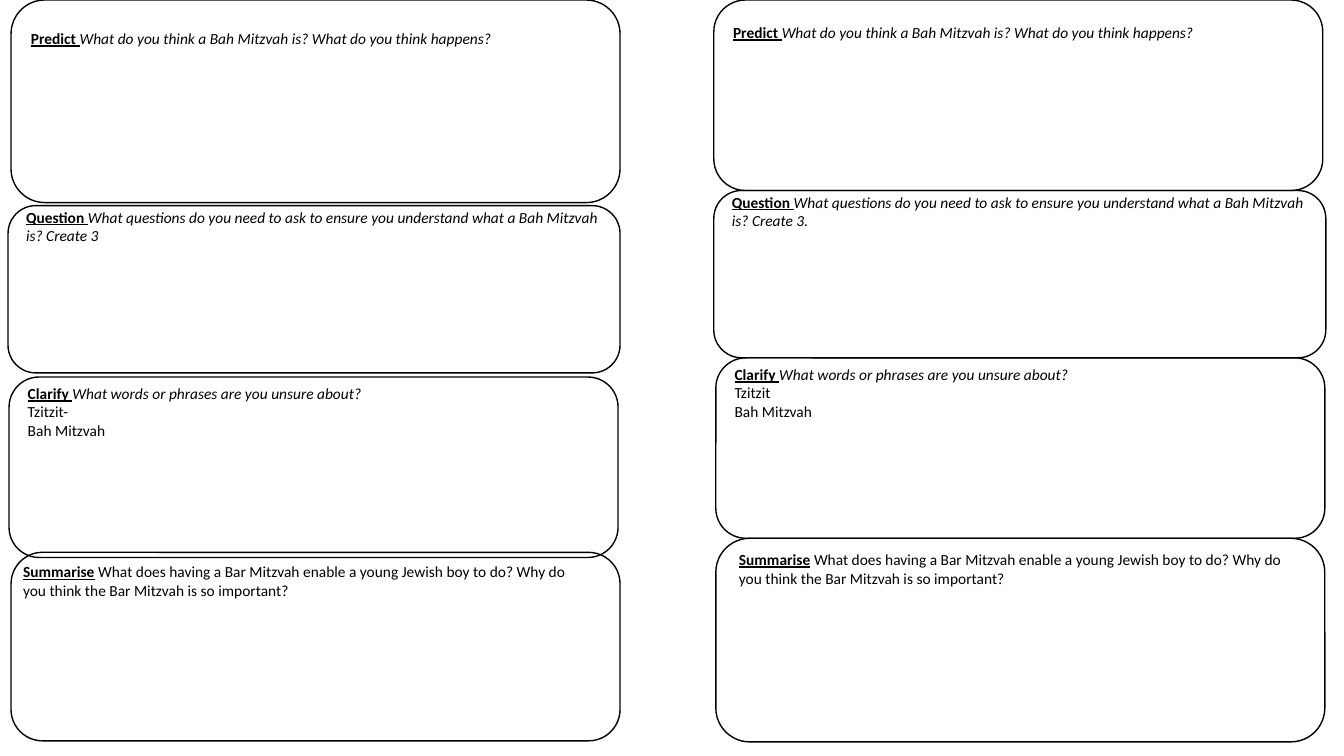
from pptx import Presentation
from pptx.dml.color import RGBColor
from pptx.enum.shapes import MSO_SHAPE
from pptx.enum.text import MSO_ANCHOR, MSO_AUTO_SIZE, PP_ALIGN
from pptx.util import Inches, Pt

ROUNDED = MSO_SHAPE.ROUNDED_RECTANGLE
MIDDLE = MSO_ANCHOR.MIDDLE
GROW = MSO_AUTO_SIZE.SHAPE_TO_FIT_TEXT
LEFT = PP_ALIGN.LEFT
BLACK = RGBColor(0, 0, 0)

PREDICT = "What do you think a Bah Mitzvah is? What do you think happens?"
QUESTION = ("What questions do you need to ask to ensure you understand "
            "what a Bah Mitzvah is? Create 3")
CLARIFY = "What words or phrases are you unsure about?"
SUMMARISE = (" What does having a Bar Mitzvah enable a young Jewish boy to do? "
             "Why do you think the Bar Mitzvah is so important?")


class Worksheet:
    font, size = "Calibri", Pt(11)

    def __init__(self, slide):
        self.slide = slide

    def run(self, p, text, heading=False, italic=False):
        r = p.add_run()
        r.text = text
        r.font.name, r.font.size = self.font, self.size
        r.font.color.rgb = BLACK
        r.font.bold = r.font.underline = heading
        r.font.italic = italic

    def prompt(self, tf, heading, text, italic, words=()):
        """Write a heading with its prompt, then one line for each word."""
        tf.word_wrap = True
        p = tf.paragraphs[0]
        p.alignment = LEFT
        self.run(p, heading, heading=True)
        self.run(p, text, italic=italic)
        for word in words:
            p = tf.add_paragraph()
            p.alignment = LEFT
            self.run(p, word)

    def panel(self, left, top, width, height):
        sp = self.slide.shapes.add_shape(
            ROUNDED, Inches(left), Inches(top), Inches(width), Inches(height))
        sp.shadow.inherit = False
        sp.fill.background()
        sp.line.color.rgb = BLACK
        sp.line.width = Pt(1)
        return sp

    def prompt_panel(self, box, writing_space, heading, text, words=()):
        """Add a panel whose prompt sits above a blank writing space."""
        tf = self.panel(*box).text_frame
        tf.vertical_anchor = MIDDLE
        tf.margin_top = 0
        tf.margin_bottom = Inches(writing_space)
        self.prompt(tf, heading, text, True, words)

    def summary(self, box, text_left, text_top):
        self.panel(*box)
        sp = self.slide.shapes.add_textbox(
            Inches(text_left), Inches(text_top), Inches(5.79), Inches(0.47))
        sp.text_frame.auto_size = GROW
        self.prompt(sp.text_frame, "Summarise", SUMMARISE, False)


def main():
    prs = Presentation()
    prs.slide_width, prs.slide_height = Inches(13.33), Inches(7.5)
    sheet = Worksheet(prs.slides.add_slide(prs.slide_layouts[6]))

    # Per half: four panels, question ending, first word, summary text position
    halves = [
        ([(0.11, 0, 6.04, 2.01), (0.08, 2.04, 6.07, 1.66),
          (0.09, 3.74, 6.04, 1.79), (0.11, 5.48, 6.04, 1.87)],
         "", "Tzitzit-", (0.13, 5.53)),
        ([(7.08, 0, 6.04, 1.89), (7.08, 1.89, 6.07, 1.66),
          (7.1, 3.55, 6.04, 1.79), (7.1, 5.34, 6.04, 2.02)],
         ".", "Tzitzit", (7.23, 5.41)),
    ]
    for boxes, ending, word, summary_at in halves:
        predict, question, clarify, summary = boxes
        sheet.prompt_panel(predict, 1.25, "Predict ", PREDICT)
        sheet.prompt_panel(question, 1.25, "Question ", QUESTION + ending)
        sheet.prompt_panel(clarify, 1.1, "Clarify ", CLARIFY,
                           (word, "Bah Mitzvah"))
        sheet.summary(summary, *summary_at)

    prs.save("out.pptx")


if __name__ == "__main__":
    main()
